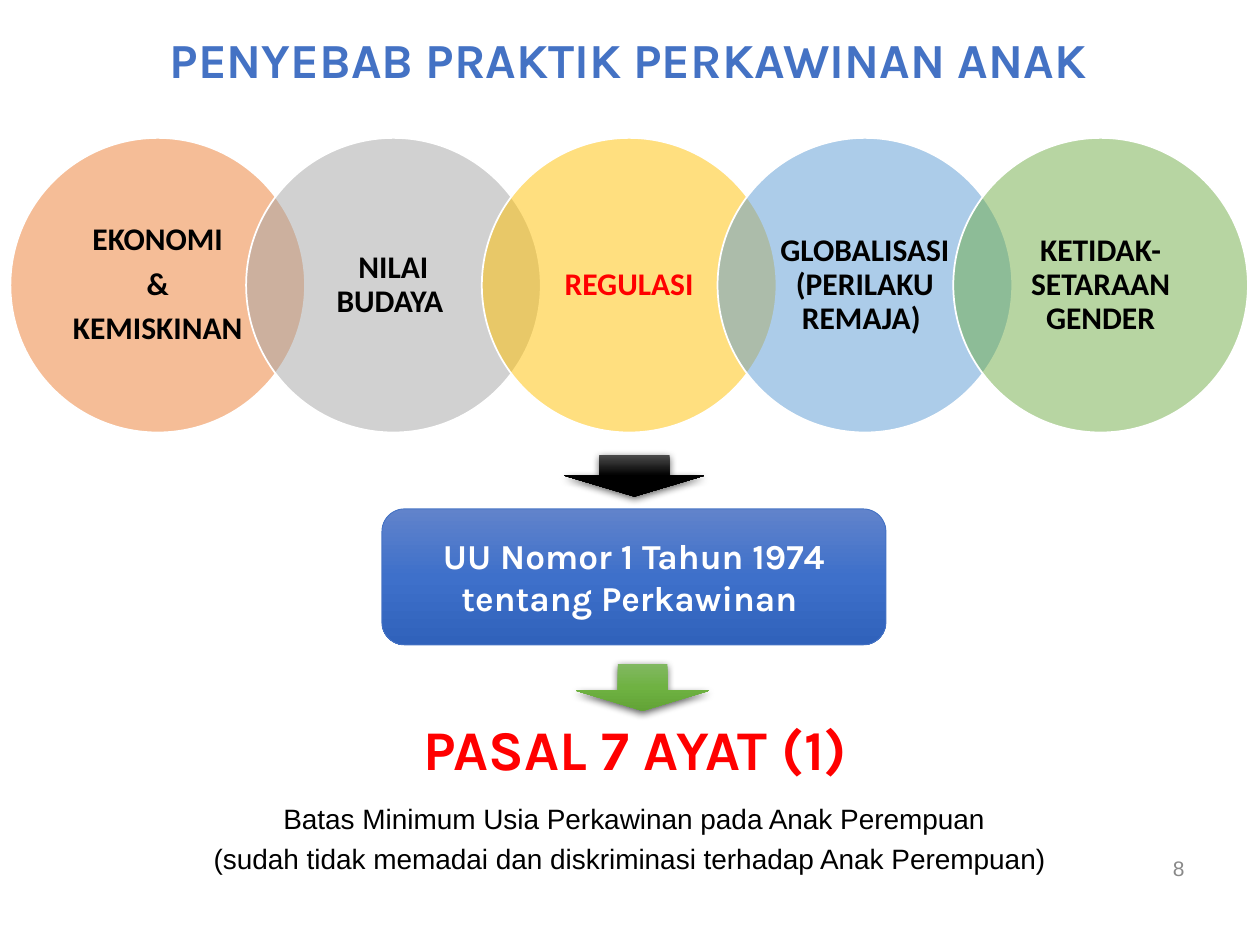
from copy import deepcopy

from lxml.etree import SubElement
from pptx import Presentation
from pptx.dml.color import RGBColor
from pptx.enum.shapes import MSO_SHAPE as Shape
from pptx.enum.text import MSO_ANCHOR as Anchor, MSO_AUTO_SIZE as AutoSize, PP_ALIGN as Align
from pptx.oxml.ns import qn
from pptx.util import Cm, Pt

BLUE = RGBColor(0x44, 0x72, 0xC4)
RED = RGBColor(0xFF, 0x00, 0x00)
BLACK = RGBColor(0x00, 0x00, 0x00)
WHITE = RGBColor(0xFF, 0xFF, 0xFF)
GRAY = RGBColor(0x89, 0x89, 0x89)
ORANGE = RGBColor(0xED, 0x7D, 0x31)
SILVER = RGBColor(0xA5, 0xA5, 0xA5)
GOLD = RGBColor(0xFF, 0xC0, 0x00)
SKY = RGBColor(0x5B, 0x9B, 0xD5)
GREEN = RGBColor(0x70, 0xAD, 0x47)
BLACK_SHADES = (RGBColor(0x4B, 0x4B, 0x4B), BLACK, BLACK)
BLUE_SHADES = (RGBColor(0x61, 0x83, 0xCB), RGBColor(0x3E, 0x70, 0xCA), RGBColor(0x30, 0x62, 0xBB))
GREEN_SHADES = (RGBColor(0x81, 0xB8, 0x61), RGBColor(0x6F, 0xB2, 0x42), RGBColor(0x62, 0xA3, 0x36))


def write(frame, lines, font, size, color, bold=False, align=Align.CENTER):
    frame.word_wrap = True
    for index, line in enumerate(lines):
        paragraph = frame.add_paragraph() if index else frame.paragraphs[0]
        paragraph.text = line
        paragraph.alignment = align
        paragraph.font.name = font
        paragraph.font.size = Pt(size)
        paragraph.font.bold = bold
        paragraph.font.color.rgb = color


def shade(shape, colors):
    shape.fill.gradient()
    shape.fill.gradient_angle = 270
    stop_list = shape.element.spPr.find(".//" + qn("a:gsLst"))
    stop_list.insert(1, deepcopy(stop_list[0]))
    for stop, color, position in zip(shape.fill.gradient_stops, colors, (0, 0.5, 1)):
        stop.color.rgb = color
        stop.position = position


deck = Presentation()
deck.slide_width, deck.slide_height = Cm(25.4), Cm(19.05)
slide = deck.slides.add_slide(deck.slide_layouts[5])
shapes = slide.shapes

title = shapes.title
title.left, title.top, title.width, title.height = Cm(1.35), Cm(0.15), Cm(22.86), Cm(2.24)
write(title.text_frame, ["PENYEBAB PRAKTIK PERKAWINAN ANAK "], "Karla", 28, BLUE, True)
title.text_frame.auto_size = AutoSize.NONE
title.text_frame.vertical_anchor = Anchor.MIDDLE
title.text_frame.paragraphs[0].line_spacing = 0.9

causes = [
    (["EKONOMI", " & ", "KEMISKINAN "], ORANGE, BLACK),
    (["NILAI BUDAYA "], SILVER, BLACK),
    (["REGULASI"], GOLD, RED),
    (["GLOBALISASI (PERILAKU REMAJA) "], SKY, BLACK),
    (["KETIDAK-SETARAAN GENDER"], GREEN, BLACK),
]
diameter = 5.94
for index, (lines, fill_color, text_color) in enumerate(causes):
    left = 0.21 + index * diameter * 0.8
    cause = shapes.add_shape(Shape.OVAL, Cm(left), Cm(2.78), Cm(diameter), Cm(diameter))
    cause.shadow.inherit = False
    cause.fill.solid()
    cause.fill.fore_color.rgb = fill_color
    SubElement(cause.element.spPr.find(".//" + qn("a:srgbClr")), qn("a:alpha"), val="50000")
    cause.line.color.rgb = WHITE
    cause.line.width = Pt(1)
    frame = cause.text_frame
    frame.margin_left = frame.margin_right = Cm(0.33)
    frame.margin_top = frame.margin_bottom = Cm(0.08)
    frame.vertical_anchor = Anchor.MIDDLE
    write(frame, lines, "Calibri", 18, text_color, True)
    for paragraph in frame.paragraphs:
        paragraph.line_spacing = 0.9
        paragraph.space_after = Pt(6)

law = shapes.add_shape(Shape.ROUNDED_RECTANGLE, Cm(7.7), Cm(10.26), Cm(10.16), Cm(2.74))
law.shadow.inherit = False
shade(law, BLUE_SHADES)
law.line.color.rgb = BLUE
law.line.width = Pt(0.5)
law.text_frame.vertical_anchor = Anchor.MIDDLE
write(law.text_frame, ["UU Nomor 1 Tahun 1974", "tentang Perkawinan "], "Karla", 20, WHITE, True)

arrows = [
    (11.38, 9.17, 2.82, 0.84, (0.5, 0.5), BLACK_SHADES),
    (11.61, 13.39, 2.69, 0.94, (0.37, 0.43), GREEN_SHADES),
]
for left, top, width, height, proportions, colors in arrows:
    arrow = shapes.add_shape(Shape.DOWN_ARROW, Cm(left), Cm(top), Cm(width), Cm(height))
    arrow.adjustments[0], arrow.adjustments[1] = proportions
    shade(arrow, colors)
    arrow.line.fill.background()
    arrow.shadow.inherit = False
    effects = arrow.element.spPr.find(qn("a:effectLst"))
    shadow = SubElement(effects, qn("a:outerShdw"), blurRad=str(Pt(4.5)), dist=str(Pt(1.5)),
                        dir="5400000", algn="ctr", rotWithShape="0")
    shadow_color = SubElement(shadow, qn("a:srgbClr"), val=str(BLACK))
    SubElement(shadow_color, qn("a:alpha"), val="63000")

captions = [
    ("PASAL 7 AYAT (1) ", 6.6, 14.27, 12.7, 1.63, "Karla", 32, RED, True, Align.CENTER),
    ("Batas Minimum Usia Perkawinan pada Anak Perempuan",
     2.13, 16.03, 21.31, 0.94, "Arial", 16, BLACK, False, Align.CENTER),
    ("(sudah tidak memadai dan diskriminasi terhadap Anak Perempuan) ",
     3.78, 16.84, 17.98, 0.94, "Arial", 16, BLACK, False, Align.CENTER),
    ("8", 18.21, 16.99, 5.92, 1.02, "Arial", 12, GRAY, False, Align.RIGHT),
]
for text, left, top, width, height, font, size, color, bold, align in captions:
    caption = shapes.add_textbox(Cm(left), Cm(top), Cm(width), Cm(height))
    caption.text_frame.vertical_anchor = Anchor.MIDDLE
    write(caption.text_frame, [text], font, size, color, bold, align)

deck.save("out.pptx")
